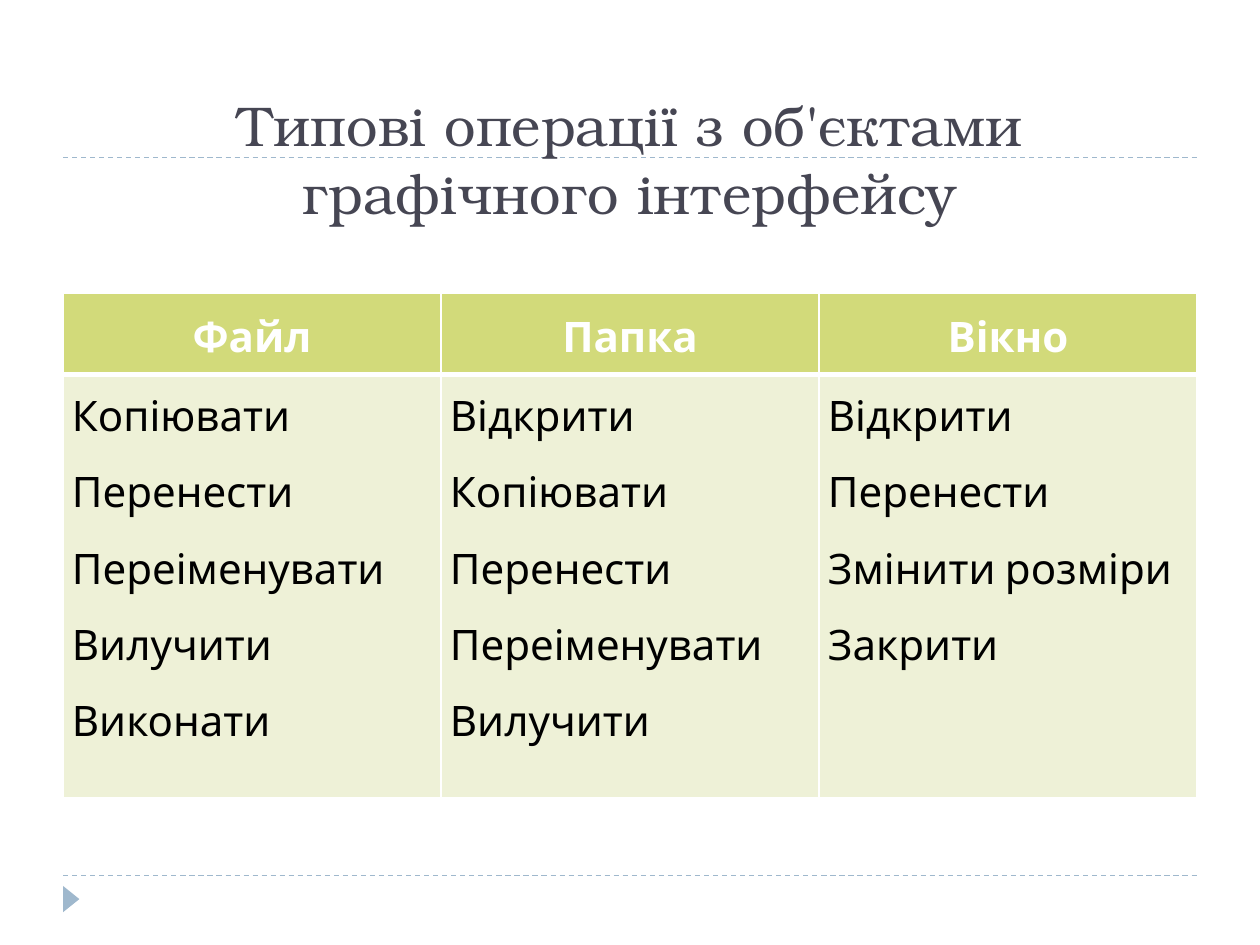
import pptx
import pptx.util
import pptx.dml.color
import pptx.enum.dml
import pptx.enum.shapes
import pptx.enum.text
import pptx.oxml
import pptx.oxml.ns
from dataclasses import dataclass

Cm, Pt = pptx.util.Cm, pptx.util.Pt
ALIGN = pptx.enum.text.PP_ALIGN
ANCHOR = pptx.enum.text.MSO_ANCHOR


@dataclass(frozen=True)
class Theme:
    ink: str = "464653"
    accent: str = "9FB8CD"
    head: str = "D2DA7A"
    body: str = "EEF1D7"
    white: str = "FFFFFF"
    black: str = "000000"
    serif: str = "TeX Gyre Bonum"
    sans: str = "Cabin"
    big: int = 32
    mid: int = 24


def color(code):
    return pptx.dml.color.RGBColor.from_string(code)


def apply(item, values):
    for name, value in values.items():
        setattr(item, name, value)


class Deck:
    def __init__(self, theme):
        self.theme = theme
        self.file = pptx.Presentation()
        apply(self.file, {"slide_width": Cm(25.4), "slide_height": Cm(19.05)})
        self.slide = self.file.slides.add_slide(self.file.slide_layouts[5])
        self.shapes = self.slide.shapes

    def style(self, para, tone, **font):
        apply(para.font, font)
        para.font.color.rgb = color(tone)

    def rule(self, top):
        line = self.shapes.add_connector(
            pptx.enum.shapes.MSO_CONNECTOR.STRAIGHT,
            Cm(1.27), Cm(top), Cm(24.13), Cm(top))
        line.line.color.rgb = color(self.theme.accent)
        apply(line.line, {"width": Pt(0.75),
                          "dash_style": pptx.enum.dml.MSO_LINE.DASH})
        line._element.spPr.append(pptx.oxml.parse_xml(
            f'<a:effectLst {pptx.oxml.ns.nsdecls("a")}/>'))

    def marker(self, left, top, width, height):
        mark = self.shapes.add_shape(
            pptx.enum.shapes.MSO_SHAPE.ISOSCELES_TRIANGLE,
            Cm(left), Cm(top), Cm(width), Cm(height))
        mark.rotation = 90
        mark.shadow.inherit = False
        mark.fill.solid()
        mark.fill.fore_color.rgb = color(self.theme.accent)
        mark.line.fill.background()

    def title(self, text):
        box = self.shapes.title
        apply(box, {"left": Cm(1.27), "top": Cm(0.43),
                    "width": Cm(22.86), "height": Cm(4.24)})
        frame = box.text_frame
        apply(frame, {"text": text, "word_wrap": True,
                      "auto_size": pptx.enum.text.MSO_AUTO_SIZE.NONE,
                      "vertical_anchor": ANCHOR.BOTTOM})
        para = frame.paragraphs[0]
        para.alignment = ALIGN.CENTER
        self.style(para, self.theme.ink, name=self.theme.serif,
                   size=Pt(self.theme.big), bold=False)
        # Keep the title in front of the rules
        box._element.getparent().append(box._element)

    def border(self, cell, base):
        props = cell._tc.get_or_add_tcPr()
        for side, width in zip("LRTB", (1, 1, 1, base)):
            props.append(pptx.oxml.parse_xml(
                f'<a:ln{side} {pptx.oxml.ns.nsdecls("a")} w="{Pt(width)}">'
                f'<a:solidFill><a:srgbClr val="{self.theme.white}"/>'
                f'</a:solidFill></a:ln{side}>'))

    def cell(self, cell, lines, head):
        theme = self.theme
        self.border(cell, 3 if head else 1)
        cell.fill.solid()
        cell.fill.fore_color.rgb = color(theme.head if head else theme.body)
        apply(cell, {f"margin_{side}": Cm(0.18)
                     for side in ("left", "right", "top", "bottom")})
        cell.vertical_anchor = ANCHOR.MIDDLE if head else ANCHOR.TOP
        cell.text = "\n".join(lines)
        for para in cell.text_frame.paragraphs:
            apply(para, {"alignment": ALIGN.CENTER if head else ALIGN.LEFT,
                         "line_spacing": 1.15, "space_after": Pt(10)})
            self.style(para, theme.white if head else theme.black,
                       name=theme.sans, size=Pt(theme.mid), bold=head)

    def table(self, data):
        grid = self.shapes.add_table(2, len(data), Cm(1.27), Cm(5.92),
                                     Cm(22.86), Cm(10.16)).table
        for row, height in zip(grid.rows, (1.63, 8.53)):
            row.height = Cm(height)
        for col, (name, tasks) in enumerate(data.items()):
            self.cell(grid.cell(0, col), [name], True)
            self.cell(grid.cell(1, col), tasks, False)


def main():
    deck = Deck(Theme())

    # Frame rules and corner marker
    for top in (17.65, 3.18):
        deck.rule(top)
    deck.marker(1.17, 17.96, 0.53, 0.33)

    # Heading
    deck.title("Типові операції з об'єктами графічного інтерфейсу")

    # Tasks for each kind of object
    deck.table({
        "Файл": ["Копіювати", "Перенести", "Переіменувати",
                 "Вилучити", "Виконати"],
        "Папка": ["Відкрити", "Копіювати", "Перенести",
                  "Переіменувати", "Вилучити"],
        "Вікно": ["Відкрити", "Перенести", "Змінити розміри", "Закрити"],
    })
    deck.file.save("out.pptx")


if __name__ == "__main__":
    main()
